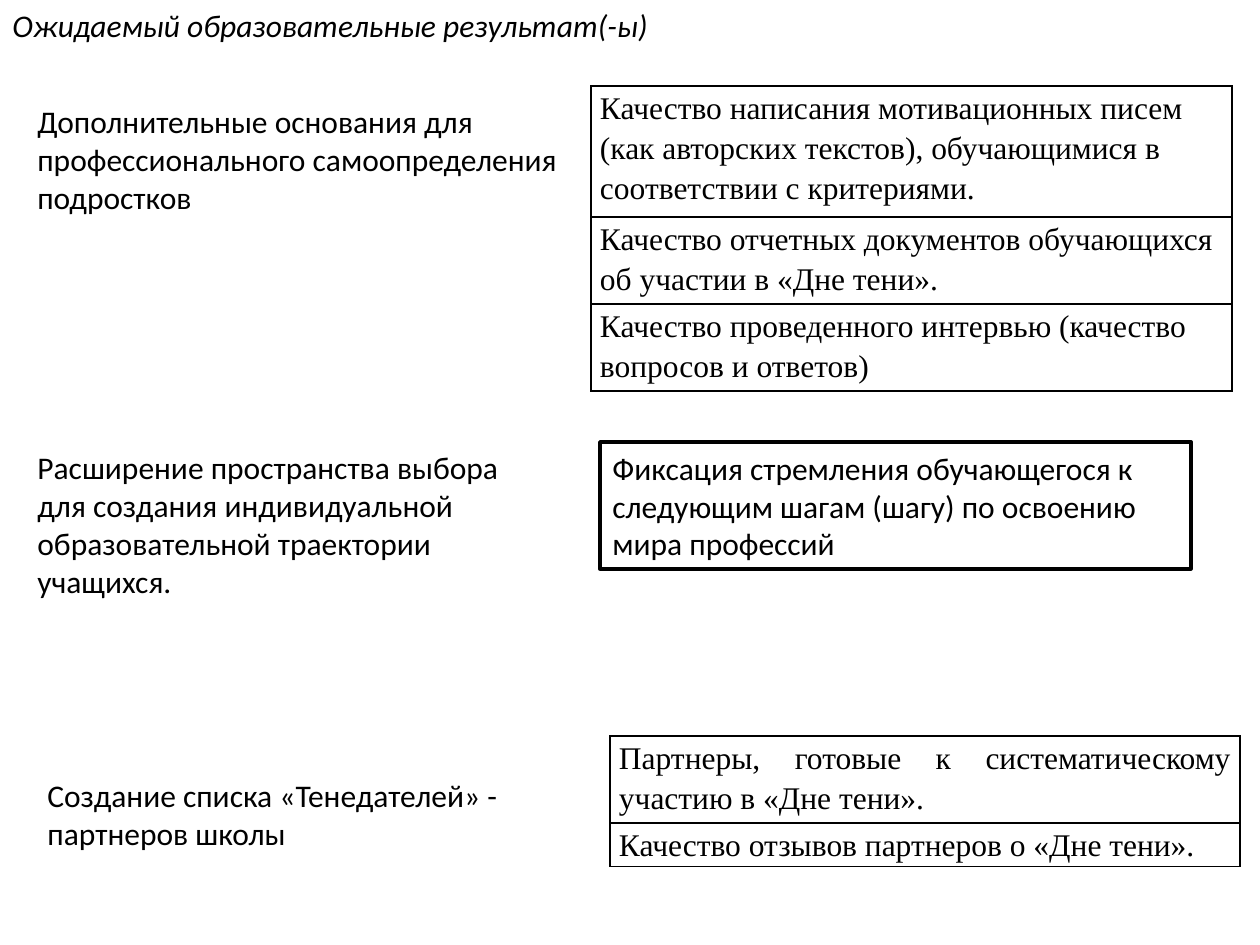
import lxml.etree
import pptx
import pptx.dml.color
import pptx.enum.shapes
import pptx.enum.text
import pptx.oxml.ns
import pptx.util

COLORS = {"ink": "000000", "paper": "FFFFFF"}
EMU_PER_PX = 914400 / 126


def px(length):
    return pptx.util.Emu(round(length * EMU_PER_PX))


def color(name):
    return pptx.dml.color.RGBColor.from_string(COLORS[name])


class ResultsSlide:
    body_font = "Calibri"
    table_font = "Times New Roman"
    size = pptx.util.Pt(18)

    def __init__(self, slide):
        self.slide = slide

    def style(self, paragraph, font, italic=False):
        paragraph.alignment = pptx.enum.text.PP_ALIGN.LEFT
        for run in paragraph.runs:
            run.font.name = font
            run.font.size = self.size
            run.font.italic = italic
            run.font.color.rgb = color("ink")

    def fill_text(self, shape, text, italic=False):
        frame = shape.text_frame
        frame.word_wrap = True
        frame.auto_size = pptx.enum.text.MSO_AUTO_SIZE.SHAPE_TO_FIT_TEXT
        frame.text = text
        self.style(frame.paragraphs[0], self.body_font, italic)

    def text(self, box, text, italic=False):
        label = self.slide.shapes.add_textbox(*map(px, box))
        self.fill_text(label, text, italic)

    def framed_text(self, box, text):
        frame = self.slide.shapes.add_shape(
            pptx.enum.shapes.MSO_SHAPE.RECTANGLE, *map(px, box))
        frame.shadow.inherit = False
        frame.fill.solid()
        frame.fill.fore_color.rgb = color("paper")
        frame.line.color.rgb = color("ink")
        frame.line.width = pptx.util.Pt(2)
        self.fill_text(frame, text)

    def border(self, cell):
        qn = pptx.oxml.ns.qn
        properties = cell._tc.get_or_add_tcPr()
        for position, side in enumerate(("lnL", "lnR", "lnT", "lnB")):
            line = lxml.etree.Element(qn(f"a:{side}"), w=str(pptx.util.Pt(1)))
            fill = lxml.etree.SubElement(line, qn("a:solidFill"))
            lxml.etree.SubElement(fill, qn("a:srgbClr"), val=COLORS["ink"])
            properties.insert(position, line)

    def table(self, left, top, width, rows, justified=()):
        height = sum(row_height for row_height, _ in rows)
        criteria = self.slide.shapes.add_table(
            len(rows), 1, *map(px, (left, top, width, height))).table
        criteria.first_row = False
        criteria.horz_banding = False
        for index, (row_height, text) in enumerate(rows):
            criteria.rows[index].height = px(row_height)
            cell = criteria.cell(index, 0)
            cell.margin_left = cell.margin_right = px(9)
            cell.margin_top = cell.margin_bottom = 0
            cell.fill.background()
            self.border(cell)
            cell.text_frame.text = text
            paragraph = cell.text_frame.paragraphs[0]
            self.style(paragraph, self.table_font)
            paragraph.line_spacing = 1.15
            if index in justified:
                paragraph.alignment = pptx.enum.text.PP_ALIGN.JUSTIFY


def main():
    deck = pptx.Presentation()
    deck.slide_width, deck.slide_height = px(1260), px(945)
    results = ResultsSlide(deck.slides.add_slide(deck.slide_layouts[6]))

    results.text((0, 0, 848, 50), "Ожидаемый образовательные результат(-ы)",
                 italic=True)

    results.text((25, 96, 630, 127),
                 "Дополнительные основания для профессионального "
                 "самоопределения подростков")
    results.table(591, 86, 641, [
        (131, "Качество написания мотивационных писем (как авторских "
              "текстов), обучающимися в соответствии с критериями."),
        (87, "Качество отчетных документов обучающихся об участии в "
             "«Дне тени»."),
        (87, "Качество проведенного интервью (качество вопросов и ответов)"),
    ])

    results.text((25, 442, 536, 165),
                 "Расширение пространства выбора для создания индивидуальной "
                 "образовательной траектории учащихся.")
    results.framed_text((600, 442, 591, 127),
                        "Фиксация стремления обучающегося к следующим шагам "
                        "(шагу) по освоению мира профессий")

    results.text((35, 770, 515, 89),
                 "Создание списка «Тенедателей» - партнеров школы")
    results.table(610, 736, 630, [
        (87, "Партнеры, готовые к систематическому участию в «Дне тени»."),
        (43, "Качество отзывов партнеров о «Дне тени»."),
    ], justified=(0,))

    deck.save("out.pptx")


if __name__ == "__main__":
    main()
